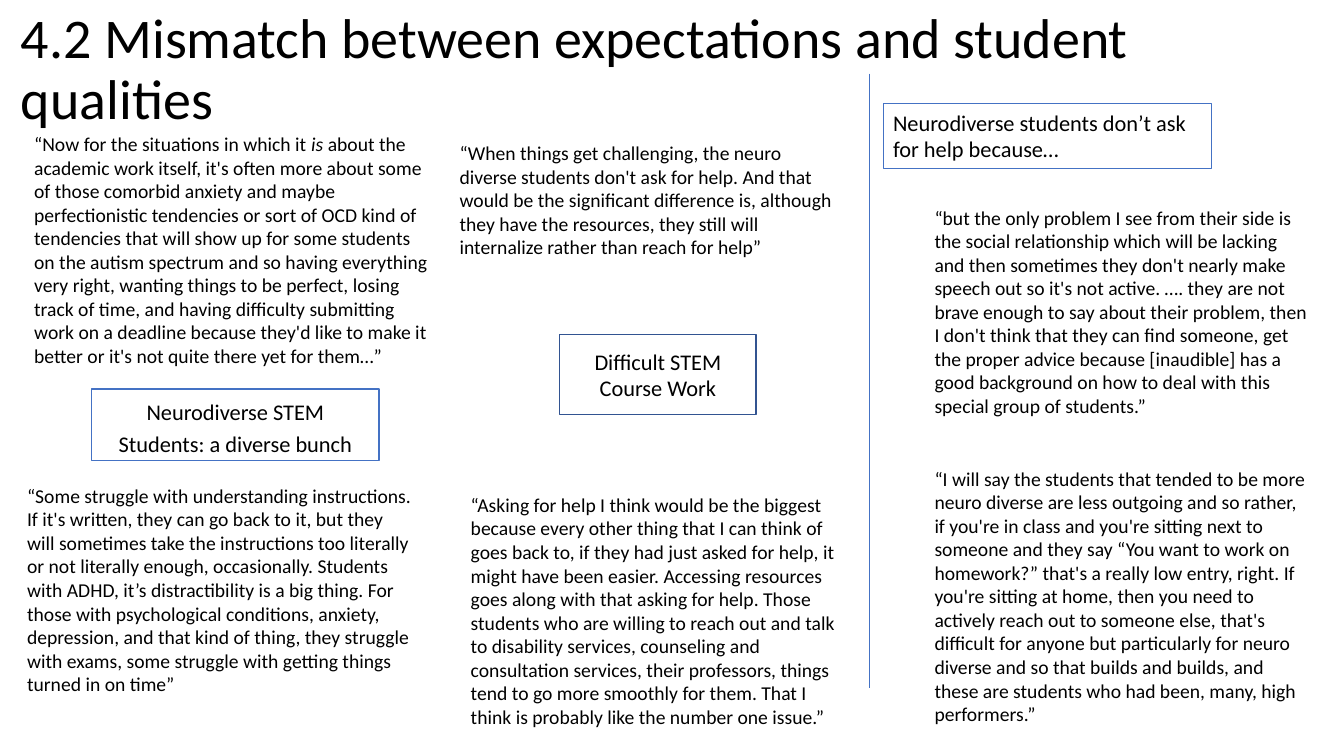
"""Builds the slide on expectations and student qualities."""
from lxml import etree
from pptx import Presentation
from pptx.dml.color import RGBColor
from pptx.enum.shapes import MSO_CONNECTOR, MSO_SHAPE
from pptx.enum.text import MSO_ANCHOR, PP_ALIGN
from pptx.oxml.ns import qn
from pptx.util import Inches, Pt

COLORS = {"text": "000000", "box": "FFFFFF", "blue": "4472C4", "navy": "325491"}

QUOTES = [
    (0.24, 1.26, 4.18, 2.46, [
        "“Now for the situations in which it ",
        "is",
        " about the academic work itself, it's often more about some of those comorbid "
        "anxiety and maybe perfectionistic tendencies or sort of OCD kind of tendencies "
        "that will show up for some students on the autism spectrum and so having "
        "everything very right, wanting things to be perfect, losing track of time, and "
        "having difficulty submitting work on a deadline because they'd like to make it "
        "better or it's not quite there yet for them…”"]),
    (0.17, 4.75, 4.03, 2.22, [
        "“Some struggle with understanding instructions. If it's written, they can go "
        "back to it, but they will sometimes take the instructions too literally or not "
        "literally enough, occasionally. Students with ADHD, it’s distractibility is a "
        "big thing. For those with psychological conditions, anxiety, depression, and "
        "that kind of thing, they struggle with exams, some struggle with getting things "
        "turned in on time”"]),
    (4.46, 1.35, 3.91, 1.28, [
        "“When things get challenging, the neuro diverse students don't ask for help. "
        "And that would be the significant difference is, although they have the "
        "resources, they still will internalize rather than reach for help”"]),
    (4.57, 4.84, 3.91, 2.46, [
        "“Asking for help I think would be the biggest because every other thing that I "
        "can think of goes back to, if they had just asked for help, it might have been "
        "easier. Accessing resources goes along with that asking for help. Those students "
        "who are willing to reach out and talk to disability services, counseling and "
        "consultation services, their professors, things tend to go more smoothly for "
        "them. That I think is probably like the number one issue.”"]),
    (9.17, 1.99, 3.91, 2.22, [
        "“but the only problem I see from their side is the social relationship which "
        "will be lacking and then sometimes they don't nearly make speech out so it's not "
        "active. …. they are not brave enough to say about their problem, then I don't "
        "think that they can find someone, get the proper advice because [inaudible] has "
        "a good background on how to deal with this special group of students.”"]),
    (9.17, 4.58, 3.91, 2.69, [
        "“I will say the students that tended to be more neuro diverse are less outgoing "
        "and so rather, if you're in class and you're sitting next to someone and they "
        "say “You want to work on homework?” that's a really low entry, right. If you're "
        "sitting at home, then you need to actively reach out to someone else, that's "
        "difficult for anyone but particularly for neuro diverse and so that builds and "
        "builds, and these are students who had been, many, high performers.”"]),
]


class SlideBuilder:
    """Holds the text style and the current slide."""

    def __init__(self, slide, font="Calibri"):
        self.slide = slide
        self.font = font

    def color(self, name):
        """Returns a named colour."""
        return RGBColor.from_string(COLORS[name])

    def set_text(self, shape, parts, size, anchor, align=PP_ALIGN.LEFT, spacing=1.0):
        """Fills a shape with runs, every second one in italics."""
        frame = shape.text_frame
        frame.word_wrap = True
        frame.vertical_anchor = anchor
        paragraph = frame.paragraphs[0]
        paragraph.alignment = align
        paragraph.line_spacing = spacing
        for index, part in enumerate(parts):
            run = paragraph.add_run()
            run.text = part
            run.font.name = self.font
            run.font.size = Pt(size)
            run.font.italic = index % 2 == 1
            run.font.color.rgb = self.color("text")

    def text(self, left, top, width, height, parts, size=14,
             anchor=MSO_ANCHOR.TOP, spacing=1.0):
        """Adds a text box."""
        shape = self.slide.shapes.add_textbox(
            Inches(left), Inches(top), Inches(width), Inches(height))
        self.set_text(shape, parts, size, anchor, spacing=spacing)

    def box(self, left, top, width, height, label, line="blue", weight=1, filled=True,
            anchor=MSO_ANCHOR.MIDDLE, align=PP_ALIGN.CENTER, spacing=1.0):
        """Adds an outlined label box."""
        shape = self.slide.shapes.add_shape(
            MSO_SHAPE.RECTANGLE, Inches(left), Inches(top), Inches(width), Inches(height))
        shape.shadow.inherit = False
        if filled:
            shape.fill.solid()
            shape.fill.fore_color.rgb = self.color("box")
        else:
            shape.fill.background()
        shape.line.color.rgb = self.color(line)
        shape.line.width = Pt(weight)
        self.set_text(shape, [label], 16, anchor, align, spacing)

    def divider(self, left, top, bottom):
        """Adds a thin vertical line."""
        connector = self.slide.shapes.add_connector(
            MSO_CONNECTOR.STRAIGHT, Inches(left), Inches(top), Inches(left), Inches(bottom))
        connector.line.color.rgb = self.color("blue")
        connector.line.width = Pt(0.5)
        etree.SubElement(connector._element.spPr, qn("a:effectLst"))


def main():
    """Builds and saves the slide."""
    presentation = Presentation()
    presentation.slide_width = Inches(13.33)
    presentation.slide_height = Inches(7.5)
    builder = SlideBuilder(presentation.slides.add_slide(presentation.slide_layouts[6]))

    builder.text(0.11, -0.02, 12.83, 1.45,
                 ["4.2 Mismatch between expectations and student qualities"],
                 size=40, anchor=MSO_ANCHOR.MIDDLE, spacing=0.9)
    for quote in QUOTES:
        builder.text(*quote)
    builder.box(0.91, 3.86, 2.85, 0.71, "Neurodiverse STEM Students: a diverse bunch",
                spacing=1.2)
    builder.box(5.55, 3.32, 1.95, 0.79, "Difficult STEM Course Work", line="navy")
    builder.box(8.76, 1.03, 3.26, 0.64, "Neurodiverse students don’t ask for help because…",
                weight=0.75, filled=False, anchor=MSO_ANCHOR.TOP, align=PP_ALIGN.LEFT)
    builder.divider(8.62, 0.73, 6.83)

    presentation.save("out.pptx")


if __name__ == "__main__":
    main()
